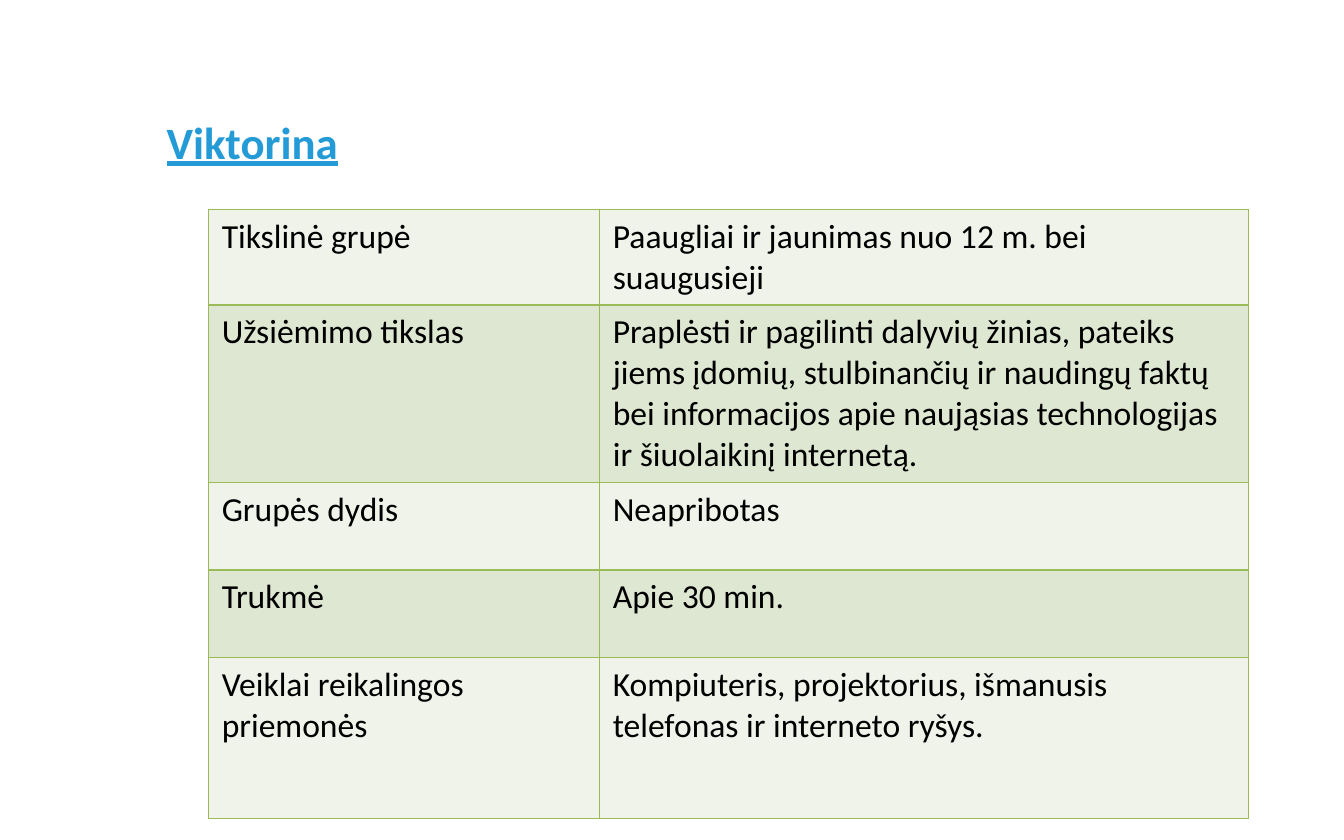
from lxml import etree
from pptx import Presentation
from pptx.dml.color import RGBColor
from pptx.enum import text
from pptx.oxml import ns
from pptx.util import Inches, Pt

ROWS = [
    (0.71, "Tikslinė grupė", "Paaugliai ir jaunimas nuo 12 m. bei suaugusieji"),
    (1.32, "Užsiėmimo tikslas",
     "Praplėsti ir pagilinti dalyvių žinias, pateiks jiems įdomių, "
     "stulbinančių ir naudingų faktų bei informacijos apie naująsias "
     "technologijas ir šiuolaikinį internetą."),
    (0.65, "Grupės dydis", "Neapribotas"),
    (0.65, "Trukmė", "Apie 30 min."),
    (1.2, "Veiklai reikalingos priemonės",
     "Kompiuteris, projektorius, išmanusis telefonas ir interneto ryšys."),
]
COL_WIDTHS = [2.91, 4.83]
BANDS = ["EFF3EA", "DEE7D1"]
BORDER = "9BBB59"


def color(value):
    return RGBColor.from_string(value)


def add_borders(cell):
    """Draw a 1 pt line on all four sides; call before filling the cell."""
    tc_pr = cell._tc.get_or_add_tcPr()
    for side in ("lnL", "lnR", "lnT", "lnB"):
        ln = etree.SubElement(tc_pr, ns.qn(f"a:{side}"), w=str(Pt(1)))
        fill = etree.SubElement(ln, ns.qn("a:solidFill"))
        etree.SubElement(fill, ns.qn("a:srgbClr"), val=BORDER)


prs = Presentation()
prs.slide_width, prs.slide_height = Inches(10), Inches(6.25)
s = prs.slides.add_slide(prs.slide_layouts[5])

# Title
title = s.shapes.title
title.left, title.top = Inches(1.14), Inches(0.53)
title.width, title.height = Inches(8.29), Inches(1.04)
tf = title.text_frame
tf.text = "Viktorina"
tf.vertical_anchor = text.MSO_ANCHOR.MIDDLE
p = tf.paragraphs[0]
p.alignment = text.PP_ALIGN.LEFT
p.font.name, p.font.size = "Calibri", Pt(24)
p.font.bold = p.font.underline = True
p.font.color.rgb = color("249BD7")

# Activity table
table = s.shapes.add_table(
    len(ROWS), len(COL_WIDTHS), Inches(1.55), Inches(1.56),
    Inches(sum(COL_WIDTHS)), Inches(sum(row[0] for row in ROWS))).table
table.first_row = False
for column, width in zip(table.columns, COL_WIDTHS):
    column.width = Inches(width)
for i, (height, *words) in enumerate(ROWS):
    table.rows[i].height = Inches(height)
    for cell, wording in zip(table.rows[i].cells, words):
        add_borders(cell)
        cell.fill.solid()
        cell.fill.fore_color.rgb = color(BANDS[i % 2])
        cell.text = wording
        p = cell.text_frame.paragraphs[0]
        p.font.name, p.font.size = "Calibri", Pt(18)
        p.font.color.rgb = color("000000")

prs.save("out.pptx")
